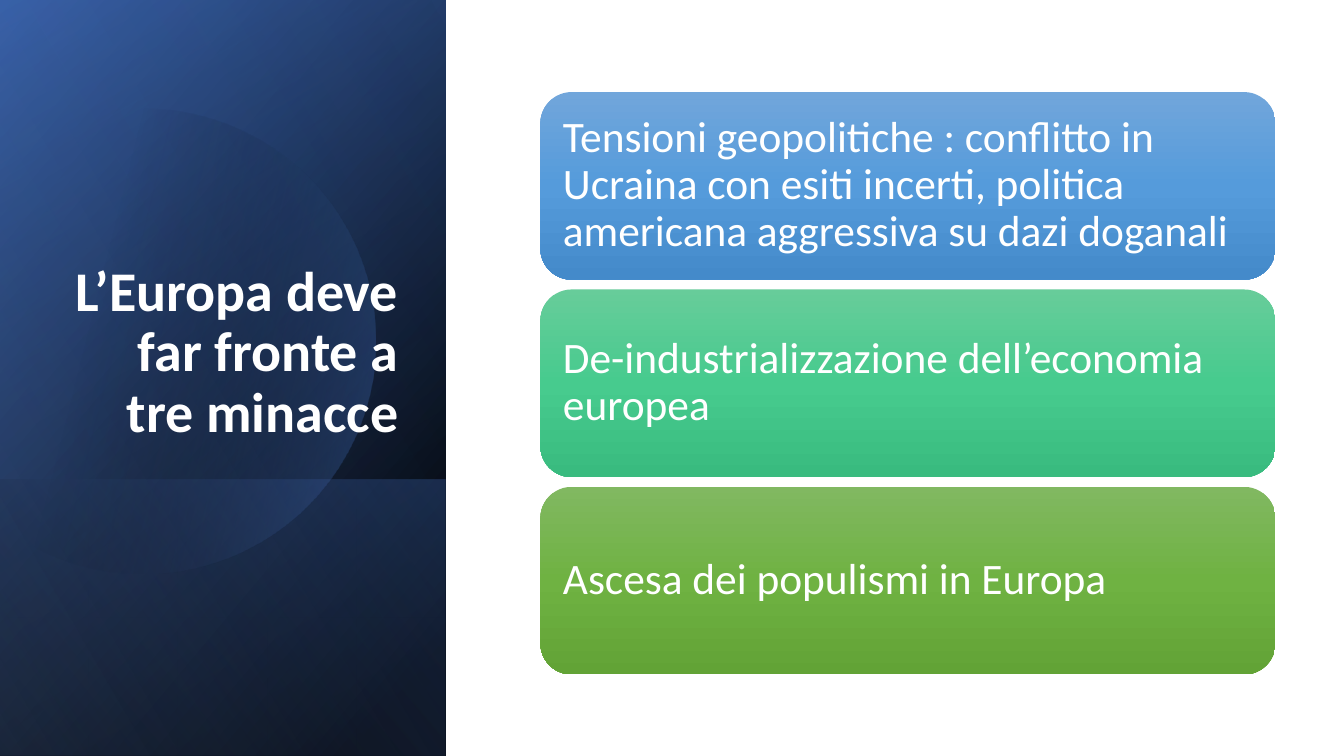
from math import acos, cos, sin

from lxml import etree
from pptx import Presentation
from pptx.dml.color import RGBColor
from pptx.enum.shapes import MSO_SHAPE
from pptx.enum.text import MSO_ANCHOR, PP_ALIGN
from pptx.oxml.ns import qn
from pptx.util import Pt

RECT = MSO_SHAPE.RECTANGLE
ROUND = MSO_SHAPE.ROUNDED_RECTANGLE
MIDDLE = MSO_ANCHOR.MIDDLE
BOTTOM = MSO_ANCHOR.BOTTOM
LEFT = PP_ALIGN.LEFT
RIGHT = PP_ALIGN.RIGHT

WIDTH, HEIGHT = 960, 540
PANEL = 318.5
STRIP = 342.75
CARDS = [
    ("Tensioni geopolitiche : conflitto in Ucraina con esiti incerti, "
     "politica americana aggressiva su dazi doganali",
     ["71A6DB", "559BDB", "448ACA"]),
    ("De-industrializzazione dell’economia europea",
     ["67CC9A", "47CB8E", "39BB7F"]),
    ("Ascesa dei populismi in Europa",
     ["81B861", "6FB242", "62A336"]),
]


def color(code):
    return RGBColor.from_string(code)


class Deck:
    font = "Calibri"
    ink = "FFFFFF"

    def __init__(self):
        self.file = Presentation()
        self.file.slide_width = Pt(WIDTH)
        self.file.slide_height = Pt(HEIGHT)
        self.slide = self.file.slides.add_slide(self.file.slide_layouts[6])

    def blend(self, shape, stops, angle):
        """Fill with (position %, colour, opacity %) stops, angle clockwise."""
        shape.shadow.inherit = False
        shape.line.fill.background()
        shape.fill.gradient()
        grad = shape._element.spPr.find(qn("a:gradFill"))
        for part in list(grad):
            grad.remove(part)
        row = etree.SubElement(grad, qn("a:gsLst"))
        for place, code, alpha in stops:
            stop = etree.SubElement(row, qn("a:gs"), pos=str(place * 1000))
            tint = etree.SubElement(stop, qn("a:srgbClr"), val=str(color(code)))
            if alpha < 100:
                etree.SubElement(tint, qn("a:alpha"), val=str(alpha * 1000))
        etree.SubElement(grad, qn("a:lin"), ang=str(angle * 60000), scaled="0")

    def box(self, kind, x, y, w, h, stops, angle):
        shape = self.slide.shapes.add_shape(kind, Pt(x), Pt(y), Pt(w), Pt(h))
        self.blend(shape, stops, angle)
        return shape

    def disc(self, x, y, radius, stops, angle):
        """Draw a circle cut off at the left edge of the slide."""
        reach = acos(-x / radius)
        steps = 120
        turns = [reach * (2 * i / steps - 1) for i in range(steps + 1)]
        dots = [(Pt(x + radius * cos(t)), Pt(y + radius * sin(t)))
                for t in turns]
        outline = self.slide.shapes.build_freeform(*dots[0])
        outline.add_line_segments(dots[1:], close=True)
        self.blend(outline.convert_to_shape(), stops, angle)

    def label(self, shape, text, size, align, anchor, bold=False):
        frame = shape.text_frame
        frame.word_wrap = True
        frame.vertical_anchor = anchor
        para = frame.paragraphs[0]
        para.text = text
        para.alignment = align
        para.line_spacing = 0.9
        para.font.name = self.font
        para.font.size = Pt(size)
        para.font.bold = bold
        para.font.color.rgb = color(self.ink)

    def title(self, text, x, y, w, h):
        shape = self.slide.shapes.add_textbox(Pt(x), Pt(y), Pt(w), Pt(h))
        self.label(shape, text, 40, RIGHT, BOTTOM, bold=True)

    def card(self, text, x, y, w, h, codes):
        stops = [(50 * i, code, 100) for i, code in enumerate(codes)]
        shape = self.box(ROUND, x, y, w, h, stops, 90)
        frame = shape.text_frame
        frame.margin_left = frame.margin_right = Pt(9.6)
        frame.margin_top = frame.margin_bottom = Pt(9.6)
        self.label(shape, text, 31, LEFT, MIDDLE)


def main():
    deck = Deck()
    panel = (RECT, 0, 0, PANEL, HEIGHT)
    deck.box(*panel, [(8, "000000", 100), (100, "2F5597", 100)], 220)
    deck.box(*panel, [(0, "000000", 0), (99, "4472C4", 46)], 240)
    deck.box(RECT, 0, STRIP, PANEL, HEIGHT - STRIP,
             [(2, "4472C4", 29), (100, "000000", 30)], 140)
    deck.disc(102, 243.5, 166, [(29, "000000", 0), (100, "4472C4", 43)], 14)
    deck.box(*panel, [(0, "000000", 0), (99, "8FAADC", 11)], 150)
    deck.title("L’Europa deve far fronte a tre minacce", 46, 132.5, 245.5, 188.5)
    for i, (text, codes) in enumerate(CARDS):
        deck.card(text, 386, 65.75 + 141 * i, 525, 134, codes)
    deck.file.save("out.pptx")


if __name__ == "__main__":
    main()
